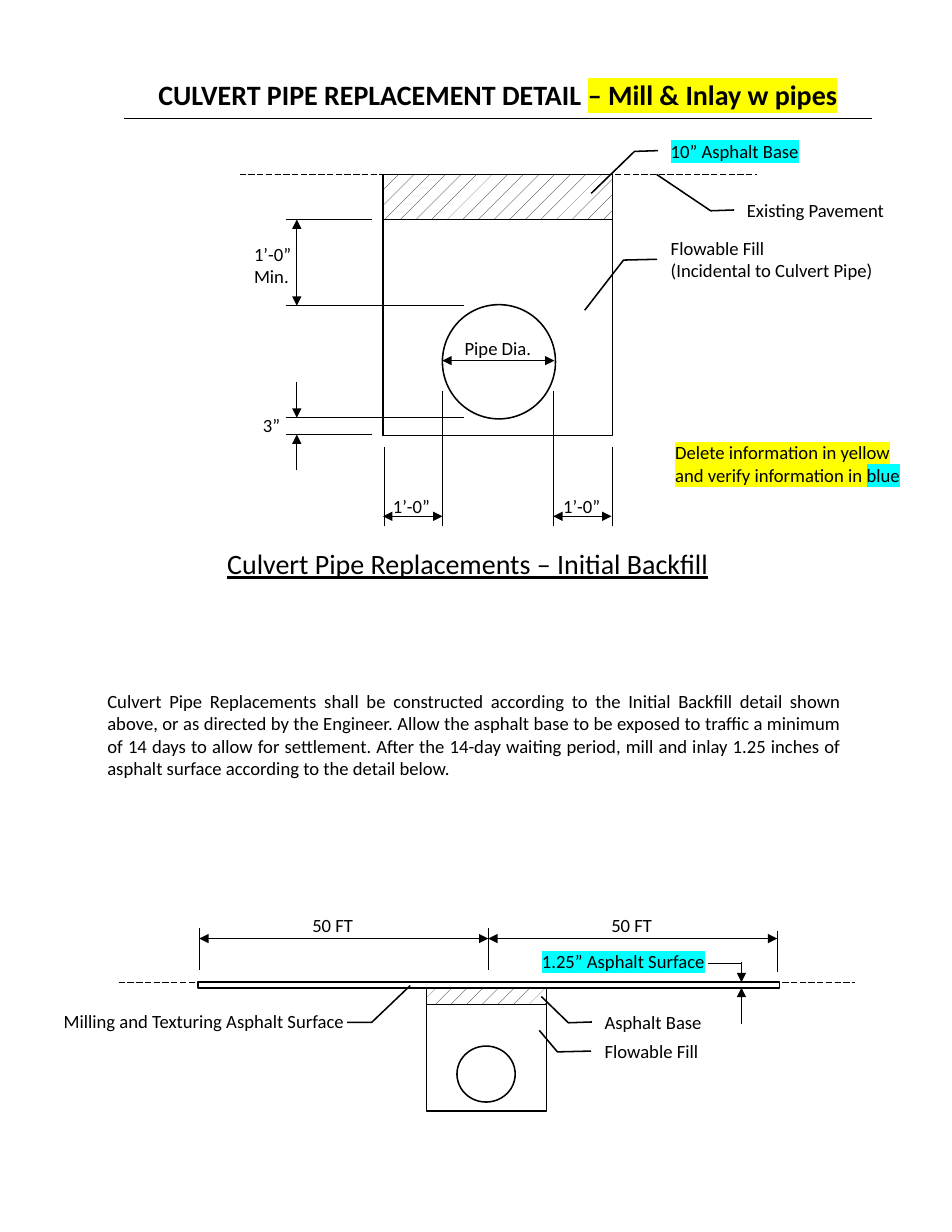
from pptx import Presentation
from pptx.dml.color import RGBColor
from pptx.enum import dml, shapes, text
from pptx.oxml import ns, xmlchemy
from pptx.util import Inches, Pt

BLACK = RGBColor(0, 0, 0)
WHITE = RGBColor(255, 255, 255)
YELLOW = RGBColor(255, 255, 0)
CYAN = RGBColor(0, 255, 255)
SHAPE = shapes.MSO_SHAPE
FONT = {"name": "Calibri", "size": Pt(12), "bold": False}
HEADING = {"size": Pt(18)}


def sub(parent, tag, **attrs):
    el = xmlchemy.OxmlElement(tag)
    for key, value in attrs.items():
        el.set(key, value)
    parent.append(el)
    return el


def write(tf, paragraphs, align=text.PP_ALIGN.LEFT, **fmt):
    """Each paragraph is a list of (words, highlight) runs."""
    for i, runs in enumerate(paragraphs):
        p = tf.paragraphs[0] if i == 0 else tf.add_paragraph()
        p.alignment = align
        for words, highlight in runs:
            r = p.add_run()
            r.text = words
            for key, value in {**FONT, **fmt}.items():
                setattr(r.font, key, value)
            r.font.color.rgb = BLACK
            if highlight:
                rPr = r.font._element
                mark = sub(rPr, "a:highlight")
                sub(mark, "a:srgbClr", val=str(highlight))
                rPr.find(ns.qn("a:solidFill")).addnext(mark)


class Drawing:
    """Places shapes relative to the top left corner (x, y)."""

    def __init__(self, canvas, x, y):
        self.canvas, self.x, self.y = canvas, x, y

    def at(self, x, y):
        return Inches(self.x + x), Inches(self.y + y)

    def line(self, x1, y1, x2, y2, ends=(), dash=None):
        c = self.canvas.add_connector(shapes.MSO_CONNECTOR.STRAIGHT, *self.at(x1, y1), *self.at(x2, y2))
        c.line.width = Pt(0.5)
        c.line.color.rgb = BLACK
        if dash:
            c.line.dash_style = dash
        for end in ends:
            sub(c.line._get_or_add_ln(), f"a:{end}End", type="triangle")
        sub(c._element.spPr, "a:effectLst")

    def dimension(self, *points):
        self.line(*points, ends=("head", "tail"))

    def arrow(self, *points):
        self.line(*points, ends=("tail",))

    def pavement(self, x1, x2):
        self.line(x1, 0, x2, 0, dash=dml.MSO_LINE.LONG_DASH)

    def shape(self, kind, x, y, w, h, fill=None):
        sp = self.canvas.add_shape(kind, *self.at(x, y), Inches(w), Inches(h))
        sp.shadow.inherit = False
        sp.line.color.rgb = BLACK
        sp.line.width = Pt(1)
        if fill == "asphalt":
            sp.fill.patterned()
            sp.fill.pattern = dml.MSO_PATTERN.PERCENT_5
            sp.fill.fore_color.rgb = BLACK
            sp.fill.back_color.rgb = WHITE
        elif fill:
            sp.fill.solid()
            sp.fill.fore_color.rgb = fill
        else:
            sp.fill.background()
        return sp

    def label(self, x, y, w, *paragraphs, h=0.3, wrap=False, **fmt):
        tb = self.canvas.add_textbox(*self.at(x, y), Inches(w), Inches(h))
        tb.text_frame.word_wrap = wrap
        tb.text_frame.auto_size = text.MSO_AUTO_SIZE.SHAPE_TO_FIT_TEXT
        write(tb.text_frame, paragraphs, **fmt)

    def callout(self, x, y, w, leader, *paragraphs):
        sp = self.shape(SHAPE.LINE_CALLOUT_2_NO_BORDER, x, y, w, 0.35)
        for i, value in enumerate(leader):
            sp.adjustments[i] = value
        sp.text_frame.vertical_anchor = text.MSO_ANCHOR.MIDDLE
        write(sp.text_frame, paragraphs)


# Shared start of the leaders that leave a callout on its left side
LEFT = (0.5, -0.01, 0.52, -0.14)


def title(s, x, y, w, h):
    table = s.shapes.add_table(1, 1, Inches(x), Inches(y), Inches(w), Inches(h)).table
    table.first_row = table.horz_banding = False
    cell = table.cell(0, 0)
    write(cell.text_frame, [[("CULVERT PIPE REPLACEMENT DETAIL ", None), ("– Mill & Inlay w pipes", YELLOW)]],
          text.PP_ALIGN.CENTER, **{**HEADING, "bold": True})
    tcPr = cell._tc.get_or_add_tcPr()
    for side, color in zip("LRTB", (WHITE, WHITE, WHITE, BLACK)):
        ln = sub(tcPr, f"a:ln{side}", w=str(Pt(1)))
        sub(sub(ln, "a:solidFill"), "a:srgbClr", val=str(color))
    sub(tcPr, "a:noFill")


def backfill_detail(s, x, y):
    d = Drawing(s.shapes.add_group_shape().shapes, x, y)
    # Trench and pipe
    d.pavement(-1.28, 3.34)
    d.shape(SHAPE.RECTANGLE, 0, 0.4, 2.05, 1.93)
    d.shape(SHAPE.RECTANGLE, 0, 0, 2.05, 0.4, "asphalt")
    d.shape(SHAPE.OVAL, 0.53, 1.16, 1.01, 1.02)
    # Extension lines
    for end, level in ((-0.1, 0.4), (-0.1, 2.32), (0.72, 1.17), (0.72, 2.17)):
        d.line(-0.87, level, end, level)
    for across, top in ((0.01, 2.43), (0.53, 1.93), (1.52, 1.93), (2.05, 2.43)):
        d.line(across, 3.14, across, top)
    # Dimension lines
    d.dimension(0.53, 1.66, 1.53, 1.66)
    d.dimension(-0.77, 0.4, -0.77, 1.17)
    d.dimension(0.53, 3.05, 0, 3.05)
    d.dimension(2.04, 3.05, 1.52, 3.05)
    d.arrow(-0.77, 1.85, -0.77, 2.17)
    d.arrow(-0.77, 2.64, -0.77, 2.32)
    # Dimension labels
    d.canvas = s.shapes
    for left, top, w, words in ((-0.01, 2.81, 0.54, "1’-0”"), (1.51, 2.81, 0.54, "1’-0”"),
                                (0.63, 1.4, 0.8, "Pipe Dia."), (-1.17, 2.09, 0.36, "3”")):
        d.label(left, top, w, [(words, None)])
    d.label(-1.25, 0.56, 0.54, [("1’-0”", None)], [("Min.", None)], h=0.5)
    # Callouts
    d.callout(2.47, -0.39, 1.61, (*LEFT, 1.59, -0.38), [("10” Asphalt Base", CYAN)])
    d.callout(2.47, 0.58, 2.31, (*LEFT, 1.8, -0.29),
              [("Flowable Fill", None)], [("(Incidental to Culvert Pipe)", None)])
    d.callout(3.15, 0.14, 1.61, (*LEFT, -0.41, -0.44), [("Existing Pavement", None)])
    # Caption
    d.label(-1.49, 3.27, 4.65, [("Culvert Pipe Replacements – Initial Backfill", None)],
            h=0.4, underline=True, **HEADING)


def instructions(s, x, y):
    d = Drawing(s.shapes, x, y)
    d.label(0, 0, 6.75, [(
        "Culvert Pipe Replacements shall be constructed according to the Initial Backfill detail shown above, "
        "or as directed by the Engineer. Allow the asphalt base to be exposed to traffic a minimum of 14 days "
        "to allow for settlement. After the 14-day waiting period, mill and inlay 1.25 inches of asphalt "
        "surface according to the detail below.", None)], h=0.91, wrap=True, align=text.PP_ALIGN.JUSTIFY)


def editing_note(s, x, y):
    d = Drawing(s.shapes, x, y)
    d.label(0, 0, 2.31, [("Delete information in yellow and verify information in ", YELLOW),
                         ("blue", CYAN)], h=0.5, wrap=True)


def inlay_detail(s, x, y):
    d = Drawing(s.shapes.add_group_shape().shapes, x, y)
    span = 2.58
    # Trench and pipe
    d.pavement(-0.72, 5.85)
    d.shape(SHAPE.RECTANGLE, 2.03, 0.2, 1.07, 0.95)
    d.shape(SHAPE.RECTANGLE, 2.03, 0, 1.07, 0.2, "asphalt")
    d.shape(SHAPE.OVAL, 2.3, 0.57, 0.52, 0.5)
    # Milled lengths on each side
    for i, drop in enumerate((0, 0, 0.02)):
        d.line(i * span, drop - 0.48, i * span, drop - 0.11)
    for i, left in enumerate((0.91, 3.58)):
        d.dimension(i * span, -0.39, (i + 1) * span, -0.39)
        d.label(left, -0.66, 0.57, [("50 FT", None)])
    # Surface layer and its thickness
    d.shape(SHAPE.RECTANGLE, -0.01, 0, 5.19, 0.05, WHITE)
    d.arrow(4.84, 0.37, 4.84, 0.05)
    d.arrow(4.84, -0.18, 4.84, 0)
    d.line(4.54, -0.17, 4.84, -0.17)
    d.label(2.96, -0.34, 1.66, [("1.25” Asphalt Surface", CYAN)])
    # Callouts
    d.callout(3.52, 0.18, 1.61, (*LEFT, -0.15, -0.29), [("Asphalt Base", None)])
    d.callout(3.52, 0.44, 2.31, (*LEFT, -0.03, -0.21), [("Flowable Fill", None)])
    d.callout(-1.31, 0.17, 3.13, (0.54, 0.84, 0.54, 0.91, -0.4, 1.02),
              [("Milling and Texturing Asphalt Surface", None)])


def main():
    prs = Presentation()
    prs.slide_width, prs.slide_height = Inches(8.5), Inches(11)
    s = prs.slides.add_slide(prs.slide_layouts[6])
    title(s, 1.1, 0.65, 6.69, 0.41)
    backfill_detail(s, 3.42, 1.56)
    instructions(s, 0.86, 6.11)
    inlay_detail(s, 1.78, 8.77)
    editing_note(s, 5.93, 3.89)
    prs.save("out.pptx")


if __name__ == "__main__":
    main()
